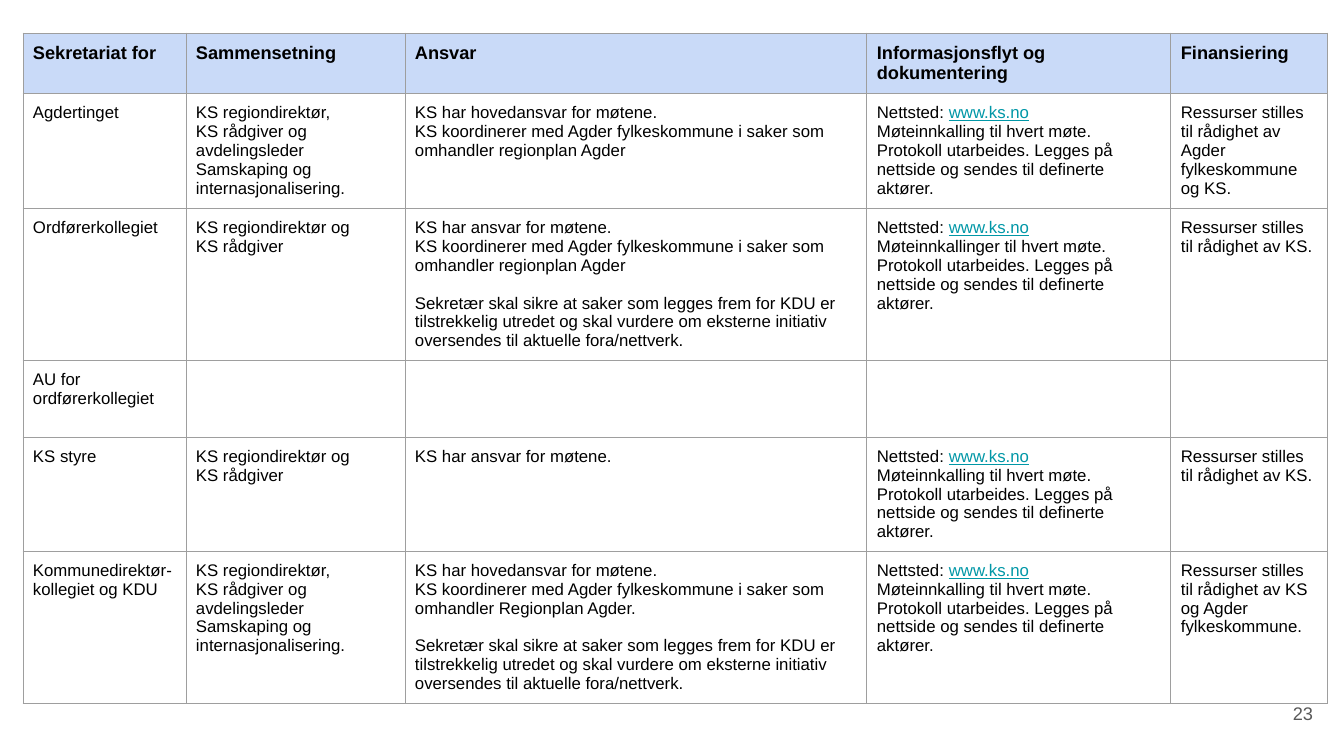
import pptx
import pptx.dml.color
import pptx.enum.text
import pptx.oxml
import pptx.oxml.ns
import pptx.util

BLACK = pptx.dml.color.RGBColor(0x00, 0x00, 0x00)
GREY = pptx.dml.color.RGBColor(0x59, 0x59, 0x59)
BORDER = pptx.dml.color.RGBColor(0x9E, 0x9E, 0x9E)
HEADER = pptx.dml.color.RGBColor(0xC9, 0xDA, 0xF8)
TEAL = pptx.dml.color.RGBColor(0x00, 0x97, 0xA7)

EMU_PER_PX = 914400 / 100.8
SITE = "www.ks.no"
COLUMN_WIDTHS = [163, 219, 462, 304, 157]
ROW_HEIGHTS = [60, 115, 151, 77, 114, 152]

ADVISER_TEAM = (
    "KS regiondirektør,\n"
    "KS rådgiver og avdelingsleder Samskaping og internasjonalisering."
)
ADVISER = "KS regiondirektør og\nKS rådgiver"
MEETINGS = "KS har ansvar for møtene."
MAIN_MEETINGS = "KS har hovedansvar for møtene."
COORDINATION = "KS koordinerer med Agder fylkeskommune i saker som omhandler"
SECRETARY = (
    "Sekretær skal sikre at saker som legges frem for KDU er tilstrekkelig utredet "
    "og skal vurdere om eksterne initiativ oversendes til aktuelle fora/nettverk."
)
PROTOCOL = "Protokoll utarbeides. Legges på nettside og sendes til definerte aktører."
NOTICE = f"Nettsted: {SITE}\nMøteinnkalling til hvert møte.\n{PROTOCOL}"
NOTICES = f"Nettsted: {SITE}\nMøteinnkallinger til hvert møte.\n{PROTOCOL}"
FUNDING = "Ressurser stilles til rådighet av"

ROWS = [
    ["Sekretariat for", "Sammensetning", "Ansvar",
     "Informasjonsflyt og dokumentering", "Finansiering"],
    ["Agdertinget", ADVISER_TEAM,
     f"{MAIN_MEETINGS}\n{COORDINATION} regionplan Agder",
     NOTICE, f"{FUNDING} Agder fylkeskommune og KS."],
    ["Ordførerkollegiet", ADVISER,
     f"{MEETINGS}\n{COORDINATION} regionplan Agder\n\n{SECRETARY}",
     NOTICES, f"{FUNDING} KS."],
    ["AU for ordførerkollegiet", "", "", "", ""],
    ["KS styre", ADVISER, MEETINGS, NOTICE, f"{FUNDING} KS."],
    ["Kommunedirektør- kollegiet og KDU", ADVISER_TEAM,
     f"{MAIN_MEETINGS}\n{COORDINATION} Regionplan Agder.\n\n{SECRETARY}",
     NOTICE, f"{FUNDING} KS og Agder fylkeskommune."],
]


def px(length):
    return pptx.util.Emu(round(length * EMU_PER_PX))


class SlideBuilder:
    font_name = "Arial"
    body_size = 12
    header_size = 13
    block_gap = 13.4

    def __init__(self, presentation):
        self.slide = presentation.slides.add_slide(presentation.slide_layouts[6])

    def set_font(self, paragraph, size, color, bold=False):
        paragraph.font.name = self.font_name
        paragraph.font.size = pptx.util.Pt(size)
        paragraph.font.bold = bold
        paragraph.font.color.rgb = color

    def set_margins(self, holder, margin):
        holder.margin_left = holder.margin_right = px(margin)
        holder.margin_top = holder.margin_bottom = px(margin)

    def write_line(self, paragraph, line):
        before, site, after = line.partition(SITE)
        for text in filter(None, (before, site, after)):
            run = paragraph.add_run()
            run.text = text
            if text == SITE:
                run.font.color.rgb = TEAL
                run.font.underline = True

    def write_cell(self, cell, text, size, bold):
        paragraph = None
        for block_index, block in enumerate(text.split("\n\n")):
            for line_index, line in enumerate(block.split("\n")):
                if paragraph is None:
                    paragraph = cell.text_frame.paragraphs[0]
                else:
                    paragraph = cell.text_frame.add_paragraph()
                if block_index and not line_index:
                    paragraph.space_before = pptx.util.Pt(self.block_gap)
                self.set_font(paragraph, size, BLACK, bold)
                self.write_line(paragraph, line)

    def add_borders(self, cell):
        properties = cell._tc.get_or_add_tcPr()
        for side in "LRTB":
            properties.append(pptx.oxml.parse_xml(
                f'<a:ln{side} {pptx.oxml.ns.nsdecls("a")} w="9525"><a:solidFill>'
                f'<a:srgbClr val="{BORDER}"/></a:solidFill></a:ln{side}>'
            ))

    def add_table(self, left, top, widths, heights, rows):
        frame = self.slide.shapes.add_table(
            len(heights), len(widths), px(left), px(top), px(sum(widths)), px(sum(heights))
        )
        table = frame.table
        table.first_row = False
        table.horz_banding = False
        for column, width in zip(table.columns, widths):
            column.width = px(width)
        for row_index, (row, height, texts) in enumerate(zip(table.rows, heights, rows)):
            row.height = px(height)
            is_header = row_index == 0
            size = self.header_size if is_header else self.body_size
            for cell, text in zip(row.cells, texts):
                self.set_margins(cell, 10)
                self.add_borders(cell)
                if is_header:
                    cell.fill.solid()
                    cell.fill.fore_color.rgb = HEADER
                else:
                    cell.fill.background()
                self.write_cell(cell, text, size, is_header)

    def add_page_number(self, left, top, width, height, number):
        shape = self.slide.shapes.add_textbox(px(left), px(top), px(width), px(height))
        text_frame = shape.text_frame
        text_frame.word_wrap = True
        text_frame.vertical_anchor = pptx.enum.text.MSO_ANCHOR.MIDDLE
        self.set_margins(text_frame, 13)
        paragraph = text_frame.paragraphs[0]
        paragraph.text = number
        paragraph.alignment = pptx.enum.text.PP_ALIGN.RIGHT
        self.set_font(paragraph, self.header_size, GREY)


def main():
    presentation = pptx.Presentation()
    presentation.slide_width = px(1344)
    presentation.slide_height = px(756)
    builder = SlideBuilder(presentation)
    builder.add_table(23, 33, COLUMN_WIDTHS, ROW_HEIGHTS, ROWS)
    builder.add_page_number(1245, 685, 81, 57, "23")
    presentation.save("out.pptx")


if __name__ == "__main__":
    main()
